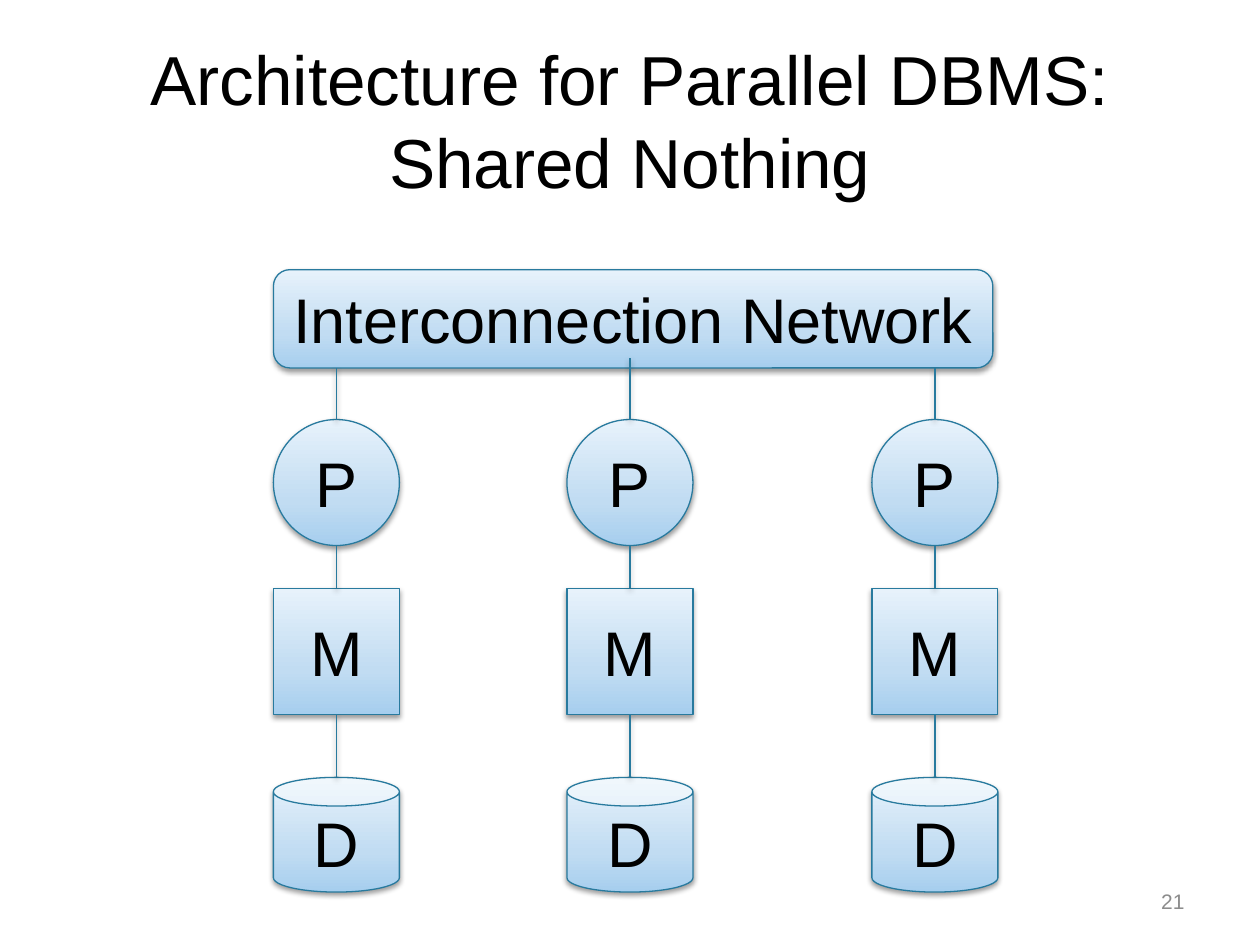
from dataclasses import dataclass

from lxml import etree
from pptx import Presentation
from pptx import util as u
from pptx.dml.color import RGBColor
from pptx.enum import shapes, text
from pptx.oxml.ns import qn
from pptx.shapes.autoshape import Shape
from pptx.shapes.connector import Connector
from pptx.slide import Slide
from pptx.text.text import TextFrame


@dataclass(frozen=True)
class Theme:
    font: str = "Arial"
    ink: str = "000000"
    muted: str = "8C8C8C"
    outline: str = "287A9E"
    gradient: tuple[tuple[int, str], ...] = ((0, "A6CEEE"), (35, "C1DCF2"), (100, "E7F2FB"))
    title_size: float = 39.6
    title_leading: float = 47.4
    label_size: float = 36
    number_size: float = 12
    line_width: float = 0.75
    shadow_blur: float = 3.1
    shadow_distance: float = 1.6
    shadow_opacity: int = 38


@dataclass(frozen=True)
class Frame:
    left: float
    top: float
    width: float
    height: float


@dataclass(frozen=True)
class Layer:
    label: str
    kind: shapes.MSO_SHAPE
    top: float
    height: float


THEME = Theme()
NETWORK = Frame(2.17, 2.14, 5.71, 0.78)
NODE_WIDTH = 1.0
COLUMNS = (2.17, 4.5, 6.92)
NETWORK_ENDS = (2.92, 2.84, 2.92)
PROCESSOR = Layer("P", shapes.MSO_SHAPE.OVAL, 3.33, 1)
MEMORY = Layer("M", shapes.MSO_SHAPE.RECTANGLE, 4.67, 1)
DISK = Layer("D", shapes.MSO_SHAPE.CAN, 6.17, 0.91)


def place(frame: Frame) -> tuple[u.Length, ...]:
    return tuple(u.Inches(n) for n in (frame.left, frame.top, frame.width, frame.height))


def write(frame: TextFrame, lines: tuple[str, ...], size: float, color: str,
          align: text.PP_ALIGN = text.PP_ALIGN.CENTER, wrap: bool = True) -> None:
    frame.word_wrap = wrap
    frame.vertical_anchor = text.MSO_ANCHOR.MIDDLE
    para = frame.paragraphs[0]
    para.alignment = align
    for index, line in enumerate(lines):
        if index:
            para.add_line_break()
        span = para.add_run()
        span.text = line
        span.font.name = THEME.font
        span.font.size = u.Pt(size)
        span.font.color.rgb = RGBColor.from_string(color)


def add_color(parent: etree._Element, color: str) -> etree._Element:
    return etree.SubElement(parent, qn("a:srgbClr"), val=color)


def cast_shadow(effects: etree._Element) -> None:
    shadow = etree.SubElement(
        effects, qn("a:outerShdw"), blurRad=str(u.Pt(THEME.shadow_blur)),
        dist=str(u.Pt(THEME.shadow_distance)), dir="5400000", rotWithShape="0")
    color = add_color(shadow, THEME.ink)
    etree.SubElement(color, qn("a:alpha"), val=str(THEME.shadow_opacity * 1000))


def outline(item: Shape | Connector) -> None:
    item.line.color.rgb = RGBColor.from_string(THEME.outline)
    item.line.width = u.Pt(THEME.line_width)


def add_node(page: Slide, kind: shapes.MSO_SHAPE, frame: Frame, label: str,
             wrap: bool = False) -> Shape:
    node = page.shapes.add_shape(kind, *place(frame))
    node.fill.gradient()
    node.fill.gradient_angle = 90
    stops = node._element.spPr.find(".//" + qn("a:gsLst"))
    for stop in list(stops):
        stops.remove(stop)
    for position, color in THEME.gradient:
        add_color(etree.SubElement(stops, qn("a:gs"), pos=str(position * 1000)), color)
    outline(node)
    node.shadow.inherit = False
    cast_shadow(node._element.spPr.find(qn("a:effectLst")))
    write(node.text_frame, (label,), THEME.label_size, THEME.ink, wrap=wrap)
    return node


def add_link(page: Slide, center: float, lower: float, upper: float) -> Connector:
    link = page.shapes.add_connector(
        shapes.MSO_CONNECTOR.STRAIGHT,
        u.Inches(center), u.Inches(lower), u.Inches(center), u.Inches(upper))
    outline(link)
    cast_shadow(etree.SubElement(link._element.spPr, qn("a:effectLst")))
    return link


def add_column(page: Slide, left: float, network_end: float) -> None:
    nodes = {
        layer.label: add_node(page, layer.kind,
                              Frame(left, layer.top, NODE_WIDTH, layer.height), layer.label)
        for layer in (PROCESSOR, MEMORY, DISK)
    }
    memory = nodes[MEMORY.label]
    center = left + NODE_WIDTH / 2
    add_link(page, center, PROCESSOR.top, network_end)
    to_processor = add_link(page, center, MEMORY.top, PROCESSOR.top + PROCESSOR.height)
    to_processor.begin_connect(memory, 0)
    to_memory = add_link(page, center, DISK.top, MEMORY.top + MEMORY.height)
    to_memory.end_connect(memory, 2)


def add_title(page: Slide) -> None:
    box = page.shapes.add_textbox(*place(Frame(0.5, 0.3, 9, 1.25)))
    box.text_frame.margin_top = u.Inches(0.1)
    write(box.text_frame, ("Architecture for Parallel DBMS:", "Shared Nothing"),
          THEME.title_size, THEME.ink)
    box.text_frame.paragraphs[0].line_spacing = u.Pt(THEME.title_leading)


def add_page_number(page: Slide) -> None:
    box = page.shapes.add_textbox(*place(Frame(7.17, 6.95, 2.33, 0.4)))
    write(box.text_frame, ("21",), THEME.number_size, THEME.muted, text.PP_ALIGN.RIGHT)


def main() -> None:
    deck = Presentation()
    deck.slide_width, deck.slide_height = u.Inches(10), u.Inches(7.5)
    page = deck.slides.add_slide(deck.slide_layouts[6])
    add_title(page)
    add_node(page, shapes.MSO_SHAPE.FLOWCHART_ALTERNATE_PROCESS, NETWORK,
             "Interconnection Network", wrap=True)
    for left, network_end in zip(COLUMNS, NETWORK_ENDS):
        add_column(page, left, network_end)
    add_page_number(page)
    deck.save("out.pptx")


if __name__ == "__main__":
    main()
